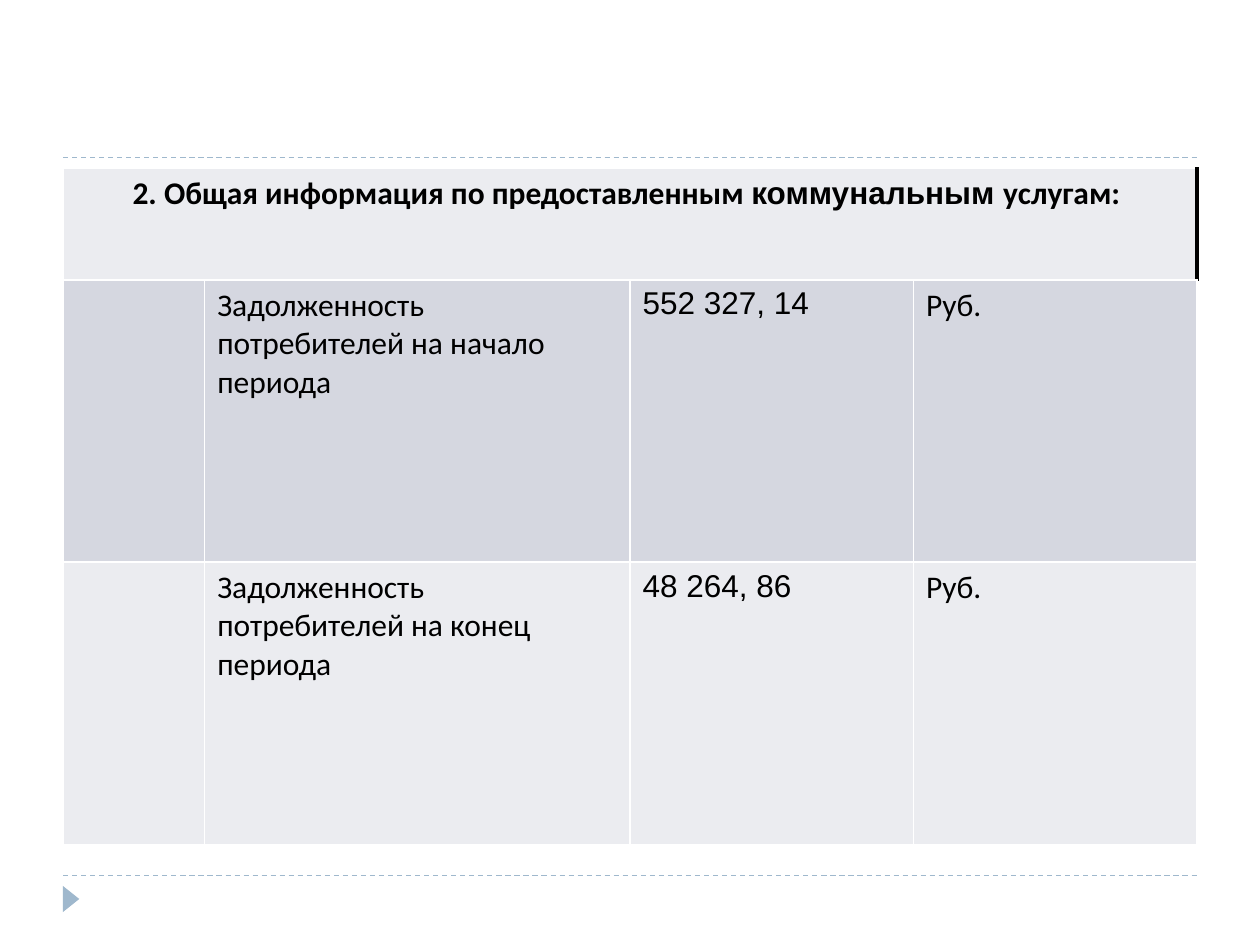
import pptx
import pptx.util
import pptx.dml.color
import pptx.enum.dml
import pptx.enum.shapes
import pptx.enum.text
import pptx.oxml
import pptx.oxml.ns
import lxml.etree

Pt = pptx.util.Pt
qn = pptx.oxml.ns.qn

# Content
HEADING = [
    ("2. Общая информация по предоставленным ", "Calibri"),
    ("коммунальным ", "Arial"),
    ("услугам: ", "Calibri"),
]
DEBTS = [
    ("", "Задолженность потребителей на начало периода", "552 327, 14", "Руб."),
    ("", "Задолженность потребителей на конец периода", "48 264, 86", "Руб."),
]
COL_FONTS = ["Calibri", "Calibri", "Arial", "Calibri"]

# Layout and colours
LEFT, WIDTH = 36, 648
TABLE_TOP = 96
COL_WIDTHS = [81, 243, 162, 162]
ROW_HEIGHTS = [64, 161.25, 161.25]
RULE_TOPS = [500.4, 90]
BAND_FILLS = ["EBECF0", "D5D7E0"]
ACCENT, WHITE, BLACK = "9FB8CD", "FFFFFF", "000000"


def rgb(value):
    return pptx.dml.color.RGBColor.from_string(value)


def set_borders(cell, right=(WHITE, 1)):
    tc_pr = cell._tc.get_or_add_tcPr()
    sides = {"lnL": (WHITE, 1), "lnR": right, "lnT": (WHITE, 1), "lnB": (WHITE, 1)}
    for i, (tag, (color, width)) in enumerate(sides.items()):
        ln = lxml.etree.Element(qn("a:" + tag), w=str(int(Pt(width))))
        fill = lxml.etree.SubElement(ln, qn("a:solidFill"))
        lxml.etree.SubElement(fill, qn("a:srgbClr"), val=color)
        tc_pr.insert(i, ln)


def style_font(font, name, bold=False):
    font.name, font.size, font.bold = name, Pt(18), bold
    font.color.rgb = rgb(BLACK)


prs = pptx.Presentation()
prs.slide_width, prs.slide_height = Pt(720), Pt(540)
s = prs.slides.add_slide(prs.slide_layouts[6])

# Dashed rules
for y in RULE_TOPS:
    rule = s.shapes.add_connector(pptx.enum.shapes.MSO_CONNECTOR.STRAIGHT,
                                  Pt(LEFT), Pt(y), Pt(LEFT + WIDTH), Pt(y))
    rule.line.color.rgb = rgb(ACCENT)
    rule.line.width = Pt(0.75)
    rule.line.dash_style = pptx.enum.dml.MSO_LINE.DASH
    lxml.etree.SubElement(rule._element.spPr, qn("a:effectLst"))

# Footer marker, pointing right
sp = s.shapes.add_shape(pptx.enum.shapes.MSO_SHAPE.ISOSCELES_TRIANGLE,
                        Pt(33.1), Pt(509), Pt(15), Pt(9.4))
sp.rotation = 90
sp.shadow.inherit = False
sp.fill.solid()
sp.fill.fore_color.rgb = rgb(ACCENT)
sp.line.fill.background()

# Table grid
table = s.shapes.add_table(len(ROW_HEIGHTS), len(COL_WIDTHS), Pt(LEFT), Pt(TABLE_TOP),
                           Pt(WIDTH), Pt(sum(ROW_HEIGHTS))).table
for col, width in zip(table.columns, COL_WIDTHS):
    col.width = Pt(width)
for i, (row, height) in enumerate(zip(table.rows, ROW_HEIGHTS)):
    row.height = Pt(height)
    for cell in row.cells:
        cell.fill.solid()
        cell.fill.fore_color.rgb = rgb(BAND_FILLS[i % 2])
        set_borders(cell, (BLACK, 2.25) if i == 0 else (WHITE, 1))

# Heading row
heading = table.cell(0, 0)
heading.merge(table.cell(0, len(COL_WIDTHS) - 1))
p = heading.text_frame.paragraphs[0]
p.alignment = pptx.enum.text.PP_ALIGN.CENTER
for text, font in HEADING:
    r = p.add_run()
    r.text = text
    style_font(r.font, font, bold=True)

# Debt rows
for i, values in enumerate(DEBTS, start=1):
    for j, (text, font) in enumerate(zip(values, COL_FONTS)):
        p = table.cell(i, j).text_frame.paragraphs[0]
        p.text = text
        style_font(p.font, font)

prs.save("out.pptx")
